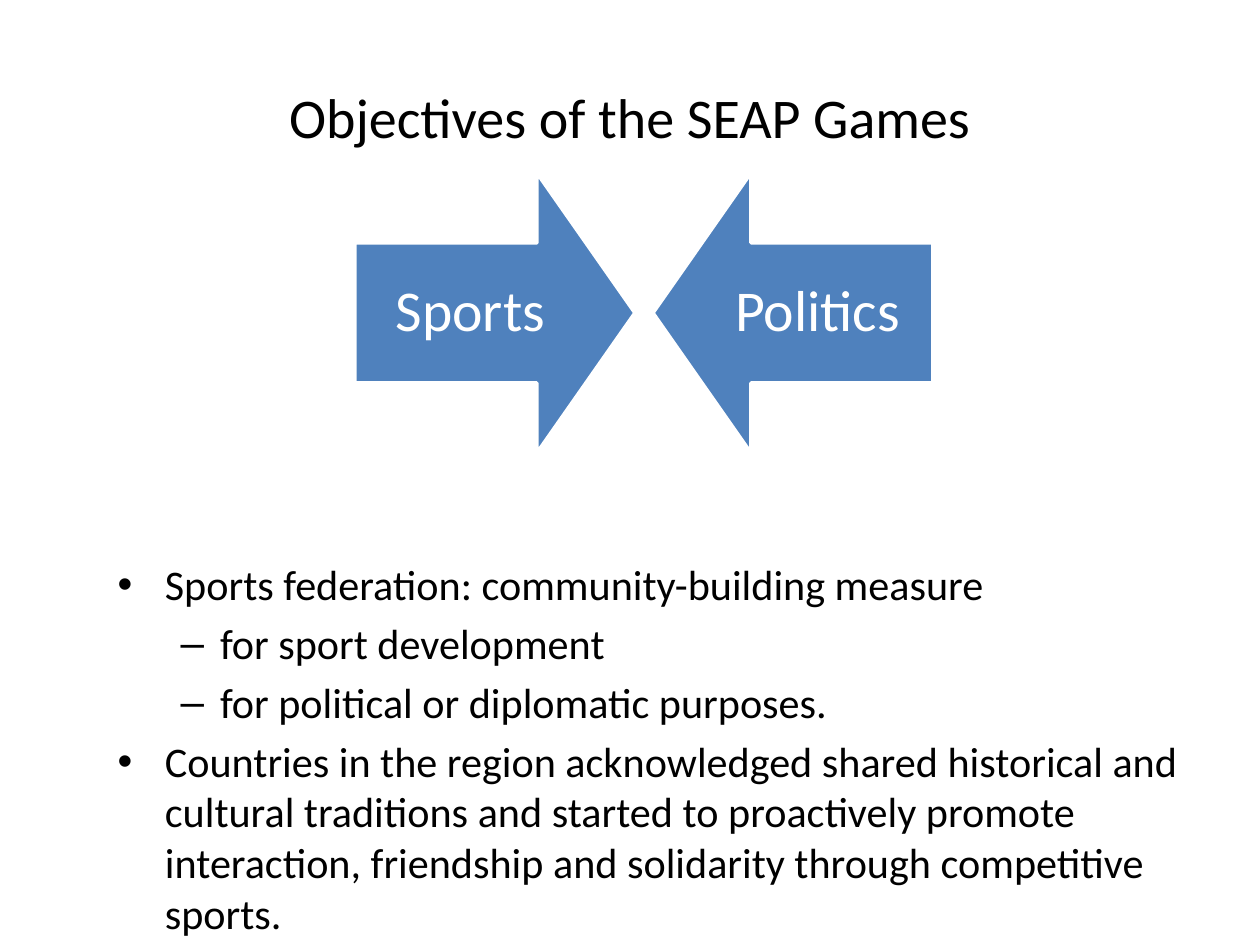
import dataclasses

import pptx
import pptx.dml.color
import pptx.enum.shapes
import pptx.enum.text
import pptx.util

PX = 914400 / 126
SHAPES = pptx.enum.shapes.MSO_SHAPE
CENTER = pptx.enum.text.PP_ALIGN.CENTER
MIDDLE = pptx.enum.text.MSO_ANCHOR.MIDDLE


@dataclasses.dataclass(frozen=True)
class Theme:
    font: str = "Calibri"
    ink: str = "000000"
    paper: str = "FFFFFF"
    accent: str = "4F81BD"
    title_size: float = 32
    body_size: float = 24.1
    arrow_size: float = 33
    outline: float = 2


THEME = Theme()


def emu(px):
    return pptx.util.Emu(round(px * PX))


def rgb(value):
    return pptx.dml.color.RGBColor.from_string(value)


def apply(target, values):
    for name, value in values.items():
        setattr(target, name, value)


def place(shape, box):
    apply(shape, dict(zip(("left", "top", "width", "height"), map(emu, box))))


def write(para, text, size, color):
    span = para.add_run()
    span.text = text
    apply(span.font, {"name": THEME.font, "size": pptx.util.Pt(size)})
    span.font.color.rgb = rgb(color)


def add_title(page, box, text):
    title = page.shapes.title
    place(title, box)
    write(title.text_frame.paragraphs[0], text, THEME.title_size, THEME.ink)


def add_objectives(page, box, items):
    body = page.placeholders[1]
    place(body, box)
    frame = body.text_frame
    frame.margin_top = emu(67)
    for index, (level, text) in enumerate(items):
        para = frame.add_paragraph() if index else frame.paragraphs[0]
        para.level = level
        write(para, text, THEME.body_size, THEME.ink)


def add_arrow(page, box, kind, label):
    arrow = page.shapes.add_shape(kind, *map(emu, box))
    arrow.shadow.inherit = False
    arrow.adjustments[0] = 0.5
    arrow.adjustments[1] = 0.35
    arrow.fill.solid()
    arrow.fill.fore_color.rgb = rgb(THEME.accent)
    arrow.line.color.rgb = rgb(THEME.paper)
    arrow.line.width = pptx.util.Pt(THEME.outline)
    frame = arrow.text_frame
    apply(frame, {"word_wrap": True, "vertical_anchor": MIDDLE,
                  "margin_left": emu(12), "margin_right": emu(12)})
    para = frame.paragraphs[0]
    apply(para, {"alignment": CENTER, "line_spacing": 0.9})
    write(para, label, THEME.arrow_size, THEME.paper)


def add_converging_arrows(page, box, labels):
    left, top, width, height = box
    kinds = (SHAPES.RIGHT_ARROW, SHAPES.LEFT_ARROW)
    starts = (left, left + width - height)
    for start, kind, label in zip(starts, kinds, labels):
        add_arrow(page, (start, top, height, height), kind, label)


def main():
    deck = pptx.Presentation()
    apply(deck, {"slide_width": emu(1260), "slide_height": emu(945)})
    page = deck.slides.add_slide(deck.slide_layouts[1])
    add_title(page, (63, 38, 1134, 157), "Objectives of the SEAP Games")
    add_objectives(page, (105, 491, 1134, 416), (
        (0, "Sports federation: community-building measure"),
        (1, "for sport development"),
        (1, "for political or diplomatic purposes."),
        (0, "Countries in the region acknowledged shared historical and "
            "cultural traditions and started to proactively promote "
            "interaction, friendship and solidarity through competitive "
            "sports."),
    ))
    add_converging_arrows(page, (355, 173, 578, 280), ("Sports", "Politics"))
    deck.save("out.pptx")


if __name__ == "__main__":
    main()
